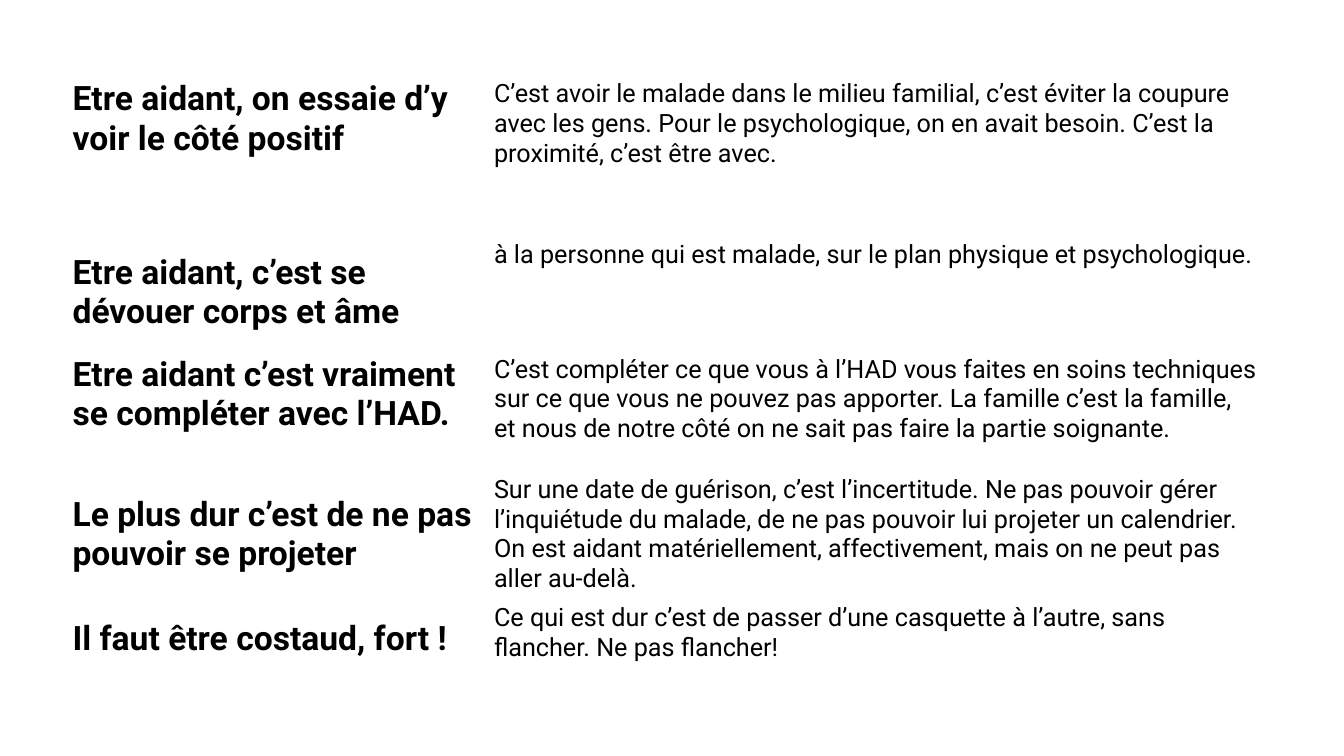
from pptx import Presentation
from pptx.dml.color import RGBColor
from pptx.enum.text import MSO_ANCHOR
from pptx.util import Inches, Pt

COLORS = {"text": "000000"}
FONT = "Roboto"
COL_WIDTHS = (4.18, 7.78)
ROW_HEIGHTS = (1.59, 1.14, 1.1, 1.25, 0.8)
HAD_ROW = 2
HAD_BOTTOM_MARGIN = 0.36

TESTIMONIES = [
    ("Etre aidant, on essaie d’y voir le côté positif",
     "C’est avoir le malade dans le milieu familial, c’est éviter la coupure "
     "avec les gens. Pour le psychologique, on en avait besoin. C’est la "
     "proximité, c’est être avec."),
    ("Etre aidant, c’est se dévouer corps et âme",
     "à la personne qui est malade, sur le plan physique et psychologique."),
    ("Etre aidant c’est vraiment se compléter avec l’HAD.",
     "C’est compléter ce que vous à l’HAD vous faites en soins techniques sur "
     "ce que vous ne pouvez pas apporter. La famille c’est la famille, et nous "
     "de notre côté on ne sait pas faire la partie soignante."),
    ("Le plus dur c’est de ne pas pouvoir se projeter",
     "Sur une date de guérison, c’est l’incertitude. Ne pas pouvoir gérer "
     "l’inquiétude du malade, de ne pas pouvoir lui projeter un calendrier. "
     "On est aidant matériellement, affectivement, mais on ne peut pas aller "
     "au-delà."),
    ("Il faut être costaud, fort !",
     "Ce qui est dur c’est de passer d’une casquette à l’autre, sans flancher. "
     "Ne pas flancher!"),
]


def fill_cell(cell, text, size, bold, anchor):
    cell.fill.background()
    cell.vertical_anchor = anchor
    p = cell.text_frame.paragraphs[0]
    p.text = text
    font = p.font
    font.name, font.size, font.bold = FONT, Pt(size), bold
    font.color.rgb = RGBColor.from_string(COLORS["text"])


def add_testimonies(slide, left, top):
    """Place the table of themes and quotes with its corner at left, top."""
    frame = slide.shapes.add_table(
        len(TESTIMONIES), len(COL_WIDTHS), Inches(left), Inches(top),
        Inches(sum(COL_WIDTHS)), Inches(sum(ROW_HEIGHTS)))
    table = frame.table
    table.first_row = table.horz_banding = False
    for col, width in zip(table.columns, COL_WIDTHS):
        col.width = Inches(width)
    for i, (theme, quote) in enumerate(TESTIMONIES):
        table.rows[i].height = Inches(ROW_HEIGHTS[i])
        anchor = MSO_ANCHOR.MIDDLE if i else MSO_ANCHOR.TOP
        fill_cell(table.cell(i, 0), theme, 24, True, anchor)
        fill_cell(table.cell(i, 1), quote, 18, False, MSO_ANCHOR.TOP)
    table.cell(HAD_ROW, 0).margin_bottom = Inches(HAD_BOTTOM_MARGIN)


def main():
    prs = Presentation()
    prs.slide_width, prs.slide_height = Inches(13.33), Inches(7.5)
    blank = prs.slide_layouts[6]
    add_testimonies(prs.slides.add_slide(blank), 0.62, 0.74)
    prs.save("out.pptx")


if __name__ == "__main__":
    main()
